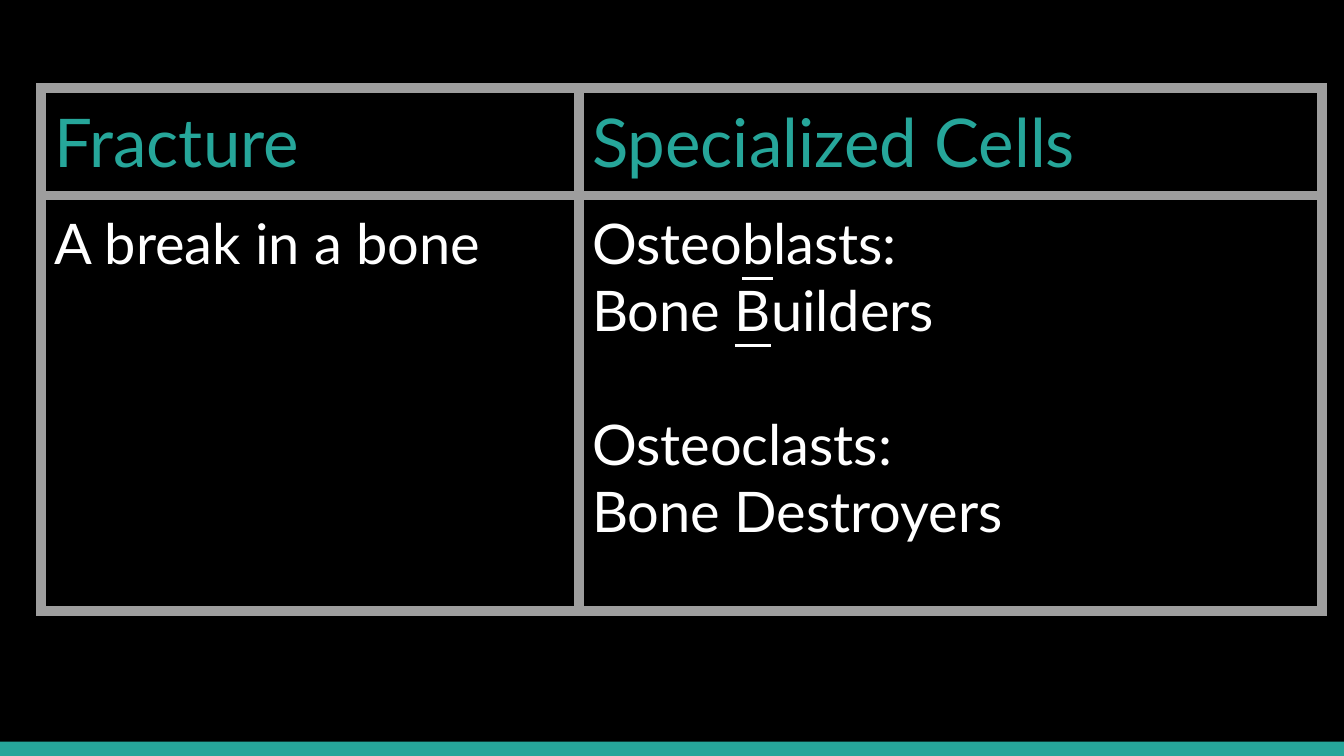
from lxml import etree
from pptx import Presentation
from pptx import util as u
from pptx.dml.color import RGBColor
from pptx.enum import shapes, text
from pptx.oxml import ns

BLACK = RGBColor(0x00, 0x00, 0x00)
WHITE = RGBColor(0xFF, 0xFF, 0xFF)
TEAL = RGBColor(0x26, 0xA6, 0x9A)
GRAY = RGBColor(0x9E, 0x9E, 0x9E)

HEAD = {"size": u.Pt(36), "name": "Lato", "color": TEAL}
BODY = {"size": u.Pt(30), "name": "Lato", "color": WHITE}
INSET = {f"margin_{side}": u.Cm(0.25) for side in ("left", "right", "top", "bottom")}
PLAIN = {"first_row": False, "horz_banding": False}

BUILD = [[("Osteo", False), ("b", True), ("lasts:", False)],
         [("Bone ", False), ("B", True), ("uilders", False)]]
BREAK = [[("Osteoclasts:", False)], [("Bone Destroyers", False)]]
ROWS = [
    [[[[("Fracture", False)]]], [[[("Specialized Cells", False)]]]],
    [[[[("A break in a bone", False)]]], [BUILD, BREAK]],
]


def apply(target, values):
    for key, value in values.items():
        if key == "color":
            target.color.rgb = value
        else:
            setattr(target, key, value)


class Deck:
    """Hold the style and the current slide, and draw each kind of element."""

    def __init__(self, width, height):
        self.deck = Presentation()
        apply(self.deck, {"slide_width": width, "slide_height": height})
        self.slide = self.deck.slides.add_slide(self.deck.slide_layouts[6])
        fill = self.slide.background.fill
        fill.solid()
        fill.fore_color.rgb = BLACK

    def bar(self, left, top, width, height, color):
        bar = self.slide.shapes.add_shape(
            shapes.MSO_SHAPE.RECTANGLE, left, top, width, height)
        bar.shadow.inherit = False
        bar.fill.solid()
        bar.fill.fore_color.rgb = color
        bar.line.fill.background()

    def table(self, left, top, cols, rows, cells, styles):
        table = self.slide.shapes.add_table(
            len(rows), len(cols), left, top, sum(cols), sum(rows)).table
        apply(table, PLAIN)
        for col, width in zip(table.columns, cols):
            col.width = width
        for row, height, line, style in zip(table.rows, rows, cells, styles):
            row.height = height
            for cell, groups in zip(row.cells, line):
                cell.fill.background()
                apply(cell, INSET)
                cell.vertical_anchor = text.MSO_ANCHOR.TOP
                self.border(cell, GRAY, u.Pt(6))
                self.label(cell.text_frame, groups, style)

    def border(self, cell, color, width):
        props = cell._tc.get_or_add_tcPr()
        for spot, side in enumerate("LRTB"):
            line = etree.Element(ns.qn(f"a:ln{side}"), w=str(int(width)))
            fill = etree.SubElement(line, ns.qn("a:solidFill"))
            etree.SubElement(fill, ns.qn("a:srgbClr"), val=str(color))
            props.insert(spot, line)

    def label(self, frame, groups, style):
        para = frame.paragraphs[0]
        for index, group in enumerate(groups):
            for order, runs in enumerate(group):
                if index or order:
                    para = frame.add_paragraph()
                if index and not order:
                    para.space_before = u.Pt(36)
                for words, under in runs:
                    run = para.add_run()
                    run.text = words
                    apply(run.font, {**style, "underline": under})

    def save(self):
        self.deck.save("out.pptx")


def main():
    deck = Deck(u.Cm(25.4), u.Cm(14.29))
    deck.bar(0, u.Cm(14.02), u.Cm(25.4), u.Cm(0.27), TEAL)
    deck.table(u.Cm(0.78), u.Cm(1.67), [u.Cm(10.16), u.Cm(14.05)],
               [u.Cm(1.6), u.Cm(7.85)], ROWS, [HEAD, BODY])
    deck.save()


if __name__ == "__main__":
    main()
